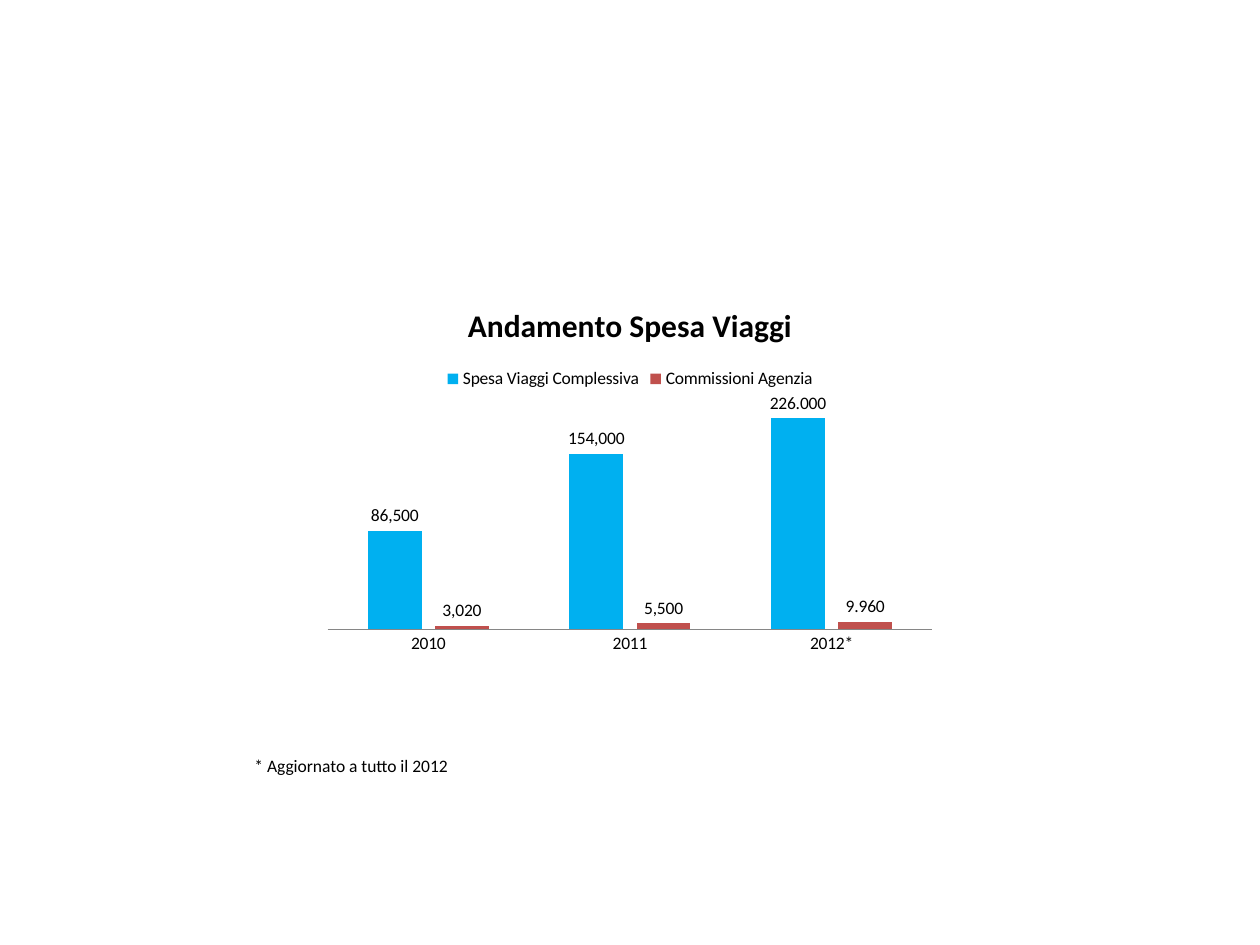
from lxml.etree import SubElement
from pptx import Presentation
from pptx.chart.data import CategoryChartData
from pptx.dml.color import RGBColor
from pptx.enum.chart import (XL_CHART_TYPE as ChartType, XL_LABEL_POSITION as LabelPosition,
                             XL_LEGEND_POSITION as LegendPosition, XL_TICK_MARK as TickMark)
from pptx.oxml.ns import qn
from pptx.util import Inches, Pt

NUMBER_FORMAT = '_-* #,##0_-;\\-* #,##0_-;_-* "-"??_-;_-@_'
YEARS = ["2010", "2011", "2012*"]
# name, colour, values, label of the last column
SERIES = [
    ("Spesa Viaggi Complessiva", "00B0F0", (86500, 154000, 185000), "226.000"),
    ("Commissioni Agenzia", "C0504D", (3020, 5500, 6607), "9.960"),
]
BORDER_WIDTHS = {"a:lnL": 1, "a:lnR": 1, "a:lnT": 1, "a:lnB": 3}


def color(hex_value):
    return RGBColor.from_string(hex_value)


def set_attributes(target, values):
    for name, value in values.items():
        setattr(target, name, value)


def format_font(font, size=10, bold=False):
    set_attributes(font, {"name": "Calibri", "size": Pt(size), "bold": bold})
    font.color.rgb = color("000000")


def format_series(series, fill, last_label):
    """Colour the columns and label them, with a written label on the last one."""
    series.format.fill.solid()
    series.format.fill.fore_color.rgb = color(fill)
    labels = series.data_labels
    set_attributes(labels, {"show_value": True, "number_format": NUMBER_FORMAT,
                            "number_format_is_linked": False,
                            "position": LabelPosition.OUTSIDE_END})
    format_font(labels.font)
    label = series.points[len(YEARS) - 1].data_label
    label.text_frame.text = last_label
    format_font(label.text_frame.paragraphs[0].runs[0].font)
    label.position = LabelPosition.OUTSIDE_END


def add_spending_chart(slide, box):
    data = CategoryChartData(number_format=NUMBER_FORMAT)
    data.categories = YEARS
    for name, _, values, _ in SERIES:
        data.add_series(name, values)
    chart = slide.shapes.add_chart(ChartType.COLUMN_CLUSTERED, *box, data).chart
    format_font(chart.font)

    title = chart.chart_title.text_frame
    title.text = "Andamento Spesa Viaggi"
    format_font(title.paragraphs[0].runs[0].font, size=18, bold=True)

    chart.has_legend = True
    set_attributes(chart.legend, {"position": LegendPosition.TOP, "include_in_layout": False})
    format_font(chart.legend.font)

    set_attributes(chart.value_axis, {"visible": False, "has_major_gridlines": False,
                                      "minimum_scale": 0, "maximum_scale": 200000})
    chart.category_axis.major_tick_mark = TickMark.NONE
    chart.category_axis.format.line.color.rgb = color("868686")

    plot = chart.plots[0]
    set_attributes(plot, {"gap_width": 150, "overlap": -25, "vary_by_categories": False})
    for series, (_, fill, _, last_label) in zip(plot.series, SERIES):
        format_series(series, fill, last_label)


def add_borders(cell, hex_value):
    properties = cell._tc.get_or_add_tcPr()
    for position, (tag, width) in enumerate(BORDER_WIDTHS.items()):
        line = SubElement(properties, qn(tag), w=str(Pt(width)))
        solid = SubElement(line, qn("a:solidFill"))
        SubElement(solid, qn("a:srgbClr"), val=hex_value)
        properties.insert(position, line)


def add_note_table(slide, box):
    table = slide.shapes.add_table(1, 1, *box).table
    set_attributes(table, {"first_row": False, "horz_banding": False})
    cell = table.cell(0, 0)
    cell.fill.solid()
    cell.fill.fore_color.rgb = color("FFFFFF")
    add_borders(cell, "FFFFFF")
    cell.text = "* Aggiornato a tutto il 2012"
    cell.margin_left = Inches(0.17)
    format_font(cell.text_frame.paragraphs[0].runs[0].font)


def main():
    presentation = Presentation()
    width, height = Inches(10), Inches(7.5)
    set_attributes(presentation, {"slide_width": width, "slide_height": height})
    slide = presentation.slides.add_slide(presentation.slide_layouts[6])
    add_spending_chart(slide, (width // 4, int(height * 0.3), width // 2, int(height * 0.4)))
    add_note_table(slide, (Inches(1.85), Inches(5.95), width * 2 // 3, Inches(0.27)))
    presentation.save("out.pptx")


if __name__ == "__main__":
    main()
